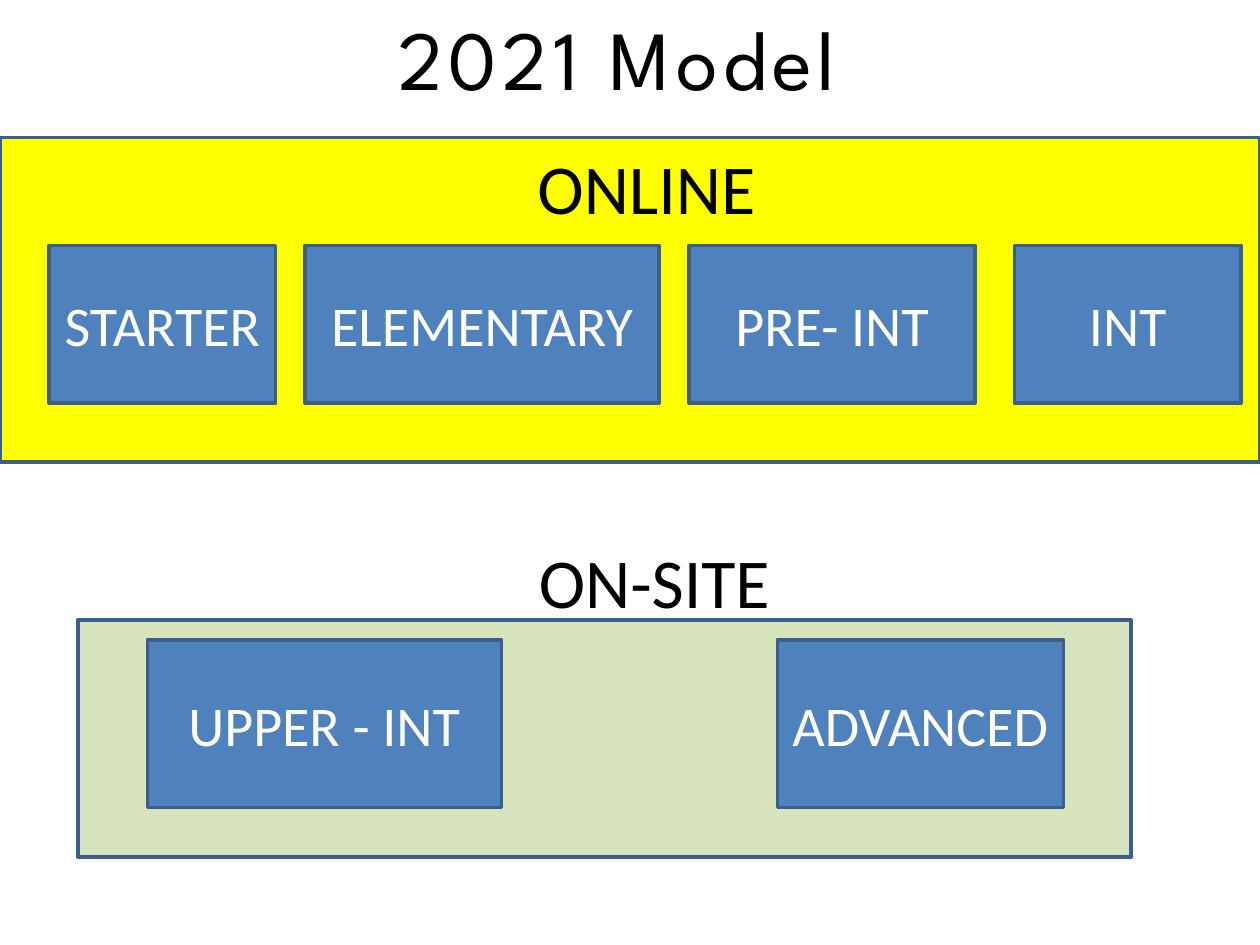
from pptx import Presentation
from pptx.dml.color import RGBColor
from pptx.enum.shapes import MSO_SHAPE
from pptx.enum.text import MSO_ANCHOR, PP_ALIGN
from pptx.util import Cm, Pt

RECTANGLE = MSO_SHAPE.RECTANGLE
MIDDLE = MSO_ANCHOR.MIDDLE
CENTER = PP_ALIGN.CENTER

COLORS = {
    "online": "FFFF00",
    "on_site": "D7E4BD",
    "level": "4F81BD",
    "outline": "3A5F8C",
    "heading": "000000",
    "level_text": "FFFFFF",
}
BODY_FONT = "Calibri"
TITLE_FONT = "League Spartan"

SLIDE_WIDTH, SLIDE_HEIGHT = 25.4, 19.05
NARROW, MEDIUM, WIDE = 4.57, 5.77, 7.14

# Each level: name, left, width (cm)
ONLINE_LEVELS = [
    ("STARTER ", 0.99, NARROW),
    ("ELEMENTARY", 6.15, WIDE),
    ("PRE- INT", 13.89, MEDIUM),
    ("INT", 20.45, NARROW),
]
ON_SITE_LEVELS = [
    ("UPPER - INT", 2.97, WIDE),
    ("ADVANCED", 15.67, MEDIUM),
]


class SlideBuilder:
    """Draws on one slide; all lengths are in centimetres."""

    def __init__(self, slide):
        self.slide = slide

    def color(self, name):
        return RGBColor.from_string(COLORS[name])

    def add_text(self, shape, text, size, color, font=BODY_FONT, spacing=None):
        """Put one centred run in the shape; spacing is in points."""
        shape.text_frame.word_wrap = True
        paragraph = shape.text_frame.paragraphs[0]
        paragraph.alignment = CENTER
        run = paragraph.add_run()
        run.text = text
        run.font.name = font
        run.font.size = Pt(size)
        run.font.color.rgb = self.color(color)
        if spacing:
            properties = run._r.get_or_add_rPr()
            properties.set("spc", str(spacing * 100))

    def box(self, left, top, width, height, fill):
        shape = self.slide.shapes.add_shape(
            RECTANGLE, Cm(left), Cm(top), Cm(width), Cm(height))
        shape.shadow.inherit = False
        shape.fill.solid()
        shape.fill.fore_color.rgb = self.color(fill)
        shape.line.color.rgb = self.color("outline")
        shape.line.width = Pt(2)
        return shape

    def heading(self, text, left, top, width, height, size=40, **style):
        shape = self.slide.shapes.add_textbox(
            Cm(left), Cm(top), Cm(width), Cm(height))
        self.add_text(shape, text, size, "heading", **style)

    def levels(self, levels, top, height):
        """Draw a row of course levels."""
        for name, left, width in levels:
            shape = self.box(left, top, width, height, "level")
            shape.text_frame.vertical_anchor = MIDDLE
            self.add_text(shape, name, 32, "level_text")


def main():
    presentation = Presentation()
    presentation.slide_width = Cm(SLIDE_WIDTH)
    presentation.slide_height = Cm(SLIDE_HEIGHT)
    builder = SlideBuilder(
        presentation.slides.add_slide(presentation.slide_layouts[6]))

    builder.box(1.57, 12.5, 21.23, 4.78, "on_site")
    builder.box(0, 2.77, SLIDE_WIDTH, 6.55, "online")
    builder.heading("2021 Model ", 0, 0, SLIDE_WIDTH, 2.31,
                    size=48, font=TITLE_FONT, spacing=3)
    for text, top in (("ONLINE ", 2.79), ("ON-SITE", 10.74)):
        builder.heading(text, 8.53, top, 9.32, 1.96)
    builder.levels(ONLINE_LEVELS, 4.95, 3.18)
    builder.levels(ON_SITE_LEVELS, 12.9, 3.38)

    presentation.save("out.pptx")


if __name__ == "__main__":
    main()
